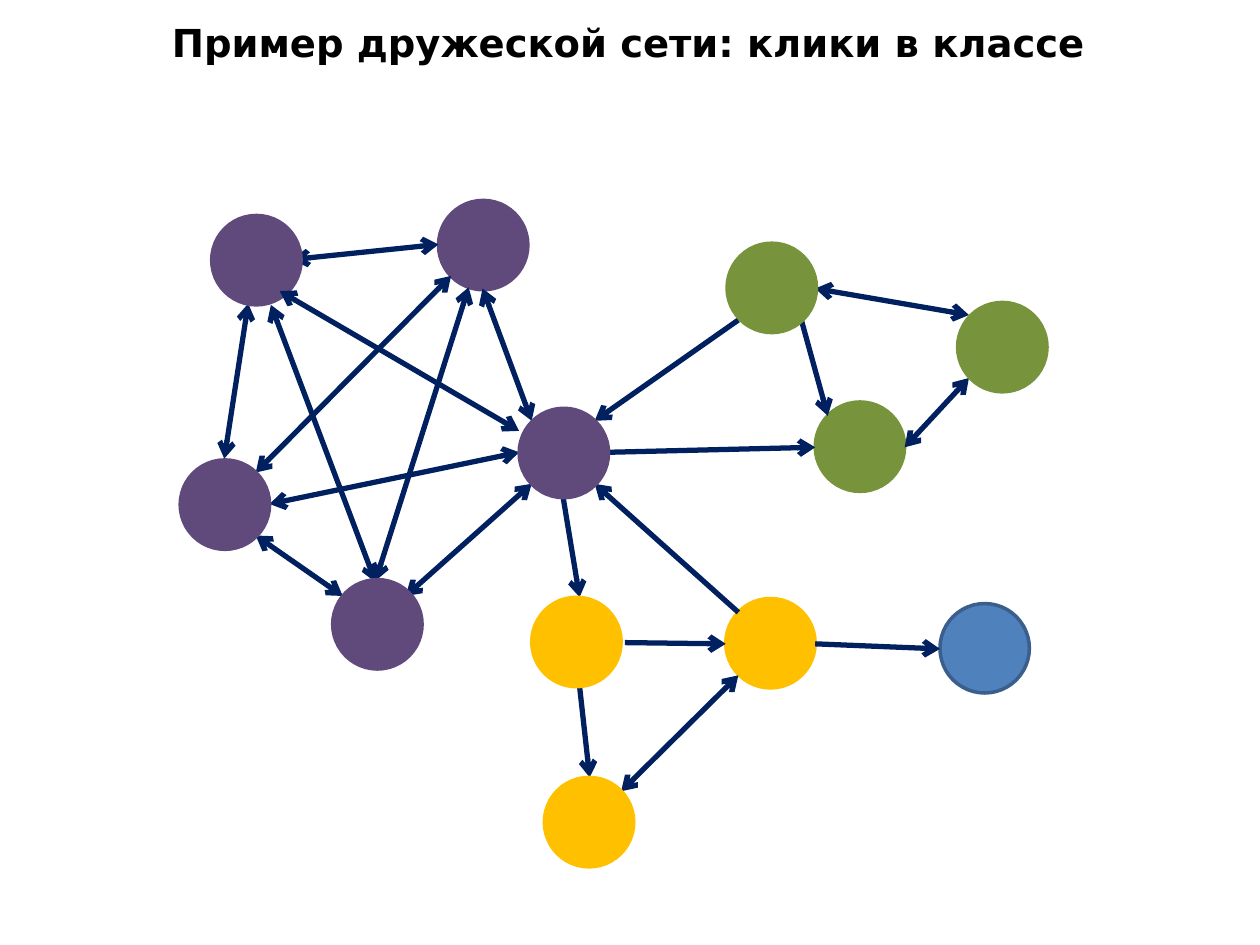
from lxml import etree
from pptx import Presentation
from pptx import util as u
from pptx.dml.color import RGBColor
from pptx.enum import shapes, text
from pptx.oxml.ns import qn

COLS, ROWS = 100, 75
PURPLE, GREEN, YELLOW, BLUE = "604A7B", "77933C", "FFC000", "4F81BD"
NAVY, BLUE_EDGE, BLACK = "002060", "3A5F8C", "000000"


def color(value):
    return RGBColor.from_string(value)


def apply(target, values):
    for name, value in values.items():
        setattr(target, name, value)


class Deck:
    font = {"name": "DejaVu Sans", "size": u.Pt(22), "bold": True}
    node_size = 7.1
    edge_width = u.Pt(2)
    arrow_width = u.Pt(3)

    def __init__(self):
        self.prs = Presentation()
        apply(self.prs, {"slide_width": u.Inches(10), "slide_height": u.Inches(7.5)})
        self.s = self.prs.slides.add_slide(self.prs.slide_layouts[5])

    def x(self, col):
        return round(self.prs.slide_width * col / COLS)

    def y(self, row):
        return round(self.prs.slide_height * row / ROWS)

    def title(self, words, col, row, cols, rows):
        sp = self.s.shapes.title
        apply(sp, {"left": self.x(col), "top": self.y(row),
                   "width": self.x(cols), "height": self.y(rows)})
        tf = sp.text_frame
        apply(tf, {"word_wrap": True, "auto_size": text.MSO_AUTO_SIZE.NONE,
                   "vertical_anchor": text.MSO_ANCHOR.MIDDLE})
        p = tf.paragraphs[0]
        p.alignment = text.PP_ALIGN.CENTER
        r = p.add_run()
        r.text = words
        apply(r.font, self.font)
        r.font.color.rgb = color(BLACK)

    def node(self, col, row, fill, edge=None):
        sp = self.s.shapes.add_shape(
            shapes.MSO_SHAPE.OVAL, self.x(col), self.y(row),
            self.x(self.node_size), self.y(self.node_size))
        sp.shadow.inherit = False
        sp.fill.solid()
        sp.fill.fore_color.rgb = color(fill)
        sp.line.color.rgb = color(edge or fill)
        sp.line.width = self.edge_width

    def arrow(self, x1, y1, x2, y2, mutual=False):
        sp = self.s.shapes.add_connector(
            shapes.MSO_CONNECTOR.STRAIGHT,
            self.x(x1), self.y(y1), self.x(x2), self.y(y2))
        sp.line.color.rgb = color(NAVY)
        sp.line.width = self.arrow_width
        ln = sp.line._get_or_add_ln()
        for tag in ("a:headEnd", "a:tailEnd") if mutual else ("a:tailEnd",):
            etree.SubElement(ln, qn(tag), type="arrow")
        etree.SubElement(sp._element.spPr, qn("a:effectLst"))


BACK_NODES = [
    (74.6, 47.9, BLUE, BLUE_EDGE), (34.8, 15.9, PURPLE),
    (64.7, 31.9, GREEN), (57.6, 47.5, YELLOW),
]
FRONT_NODES = [
    (16.8, 17.1, PURPLE), (26.4, 46, PURPLE), (14.3, 36.5, PURPLE),
    (41.2, 32.4, PURPLE), (76, 24, GREEN), (57.7, 19.3, GREEN),
    (42.2, 47.4, YELLOW), (43.2, 61.7, YELLOW),
]
MUTUAL = [
    (38.3, 22.9, 42.2, 33.4), (21.4, 40, 41.2, 35.9),
    (32.2, 47.3, 42.2, 38.4), (76.9, 30, 71.8, 35.5),
    (64.7, 22.9, 76.9, 25), (58.6, 53.6, 49.3, 62.8),
    (20.3, 42.5, 27.2, 47.3), (17.8, 36.4, 19.7, 24.1),
    (23.2, 20.6, 34.8, 19.4), (35.8, 21.9, 20.3, 37.5),
    (29.8, 46.1, 37.2, 22.8), (29.8, 46.2, 21.5, 24.2),
]
ONE_WAY = [
    (58.6, 25.4, 47.2, 33.4), (58.6, 48.6, 47.2, 38.4),
    (48.2, 35.9, 64.7, 35.5), (44.7, 39.5, 46, 47.4),
    (63.6, 25.4, 65.7, 33), (64.7, 51.1, 74.6, 51.5),
    (49.6, 51, 57.6, 51.1), (46, 54.5, 46.8, 61.7),
]
TOP_ARROW = (22.2, 23.1, 41.2, 34.2)


def main():
    deck = Deck()
    deck.title("Пример дружеской сети: клики в классе", 1.8, 1, 96.1, 4.7)
    for node in BACK_NODES:
        deck.node(*node)
    for ends in MUTUAL:
        deck.arrow(*ends, mutual=True)
    for ends in ONE_WAY:
        deck.arrow(*ends)
    for node in FRONT_NODES:
        deck.node(*node)
    deck.arrow(*TOP_ARROW, mutual=True)
    deck.prs.save("out.pptx")


if __name__ == "__main__":
    main()
